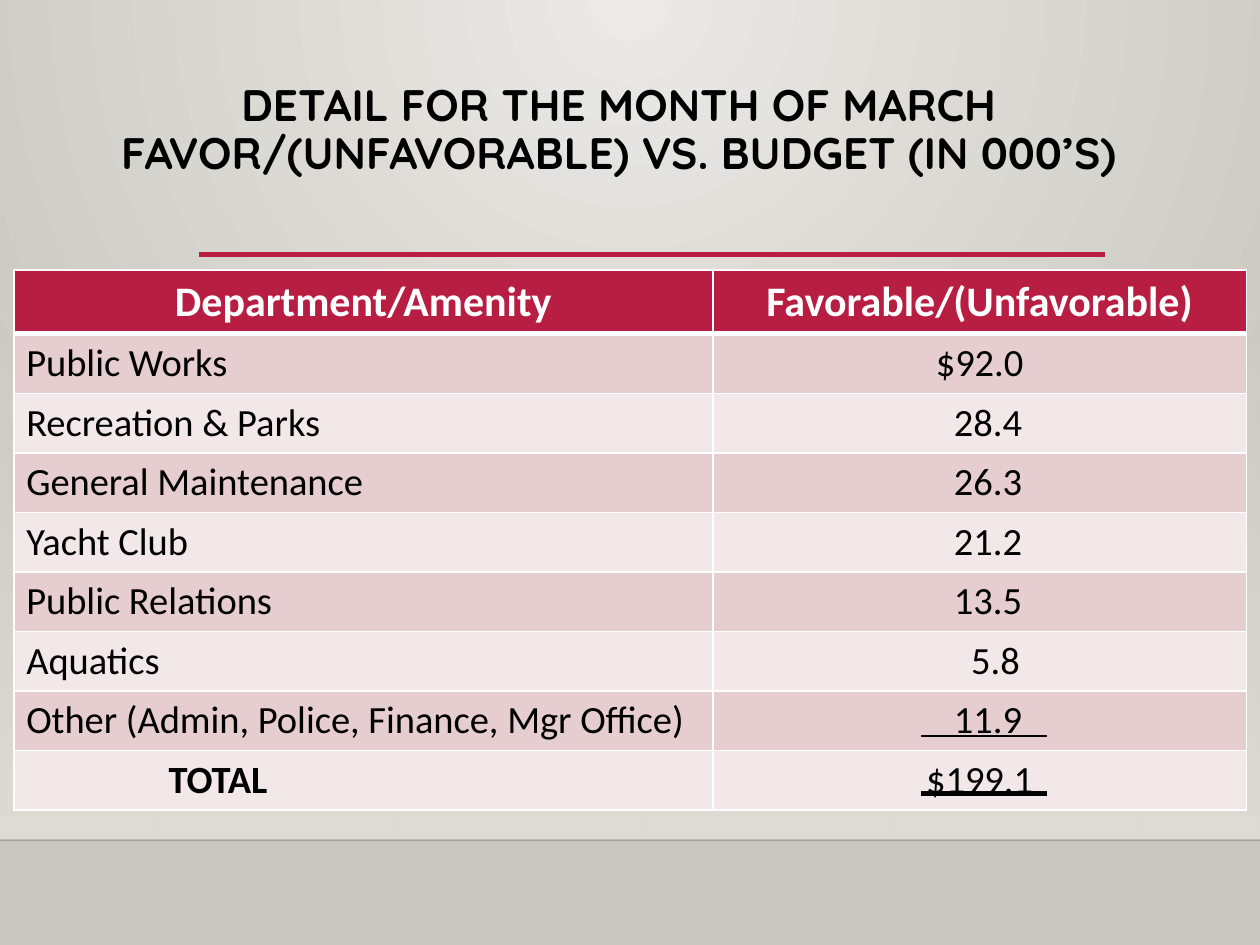
from lxml import etree
from pptx import Presentation
from pptx.dml.color import RGBColor
from pptx.enum.shapes import MSO_CONNECTOR, MSO_SHAPE
from pptx.enum.text import MSO_ANCHOR, MSO_AUTO_SIZE, PP_ALIGN
from pptx.oxml.ns import qn
from pptx.util import Cm, Pt

STRAIGHT = MSO_CONNECTOR.STRAIGHT
RECT = MSO_SHAPE.RECTANGLE
LEFT, CENTER = PP_ALIGN.LEFT, PP_ALIGN.CENTER
BOTTOM = MSO_ANCHOR.BOTTOM
FIXED = MSO_AUTO_SIZE.NONE

HUES = {
    "glow": "ECEAE7", "edge": "CAC7C1", "band": "DFDBD5", "floor": "000001",
    "red": "B71E42", "dark": "E6CDCF", "pale": "F3E8E9",
    "black": "000000", "white": "FFFFFF",
}
INSET = 0.25  # usual side margin of a cell, cm

# Label, value, extra left margin of label and of value in cm
ROWS = [
    ("Public Works", "$92.0", 0, 0),
    ("Recreation & Parks", "28.4", 0, 0.34),
    ("General Maintenance", "26.3", 0, 0.34),
    ("Yacht Club", "21.2", 0, 0.34),
    ("Public Relations", "13.5", 0, 0.34),
    ("Aquatics", "5.8", 0, 0.64),
    ("Other (Admin, Police, Finance, Mgr Office)", "11.9", 0, 0.34),
    ("TOTAL", "$199.1", 2.87, 0),
]


def rgb(hue):
    return RGBColor.from_string(HUES[hue])


def write(frame, text, font="Calibri", size=22, hue="black", bold=False,
          align=LEFT, space=None):
    frame.text = text
    para = frame.paragraphs[0]
    para.alignment = align
    para.line_spacing = space
    for run in para.runs:
        run.font.name = font
        run.font.size = Pt(size)
        run.font.bold = bold
        run.font.color.rgb = rgb(hue)


def fade(node, share):
    """Set the opacity, in percent, of the colour inside a node."""
    color = node.find(".//" + qn("a:srgbClr"))
    etree.SubElement(color, qn("a:alpha")).set("val", str(share * 1000))


def blend(fill, start, end):
    fill.gradient()
    for stop, hue, place in zip(fill.gradient_stops, (start, end), (0, 1)):
        stop.color.rgb = rgb(hue)
        stop.position = place


class Deck:
    def __init__(self):
        self.prs = Presentation()
        self.prs.slide_width, self.prs.slide_height = Cm(25.4), Cm(19.05)
        self.slide = self.prs.slides.add_slide(self.prs.slide_layouts[5])
        self.shapes = self.slide.shapes

    def ground(self):
        blend(self.slide.background.fill, "glow", "edge")
        grad = self.slide.element.find(".//" + qn("a:gradFill"))
        grad.remove(grad.find(qn("a:lin")))
        path = etree.Element(qn("a:path"), path="circle")
        etree.SubElement(path, qn("a:fillToRect"),
                         l="43000", t="0", r="43000", b="100000")
        grad.find(qn("a:gsLst")).addnext(path)

    def band(self, top, high):
        box = self.shapes.add_shape(RECT, 0, Cm(top), self.prs.slide_width,
                                    Cm(high))
        box.shadow.inherit = False
        box.line.fill.background()
        blend(box.fill, "band", "band")
        box.fill.gradient_angle = 270
        fade(box.element.find(".//" + qn("a:gs")), 0)

    def title(self, text, left, top, wide, high):
        box = self.shapes.title
        box.left, box.top, box.width, box.height = map(
            Cm, (left, top, wide, high))
        frame = box.text_frame
        frame.auto_size = FIXED
        frame.word_wrap = True
        frame.vertical_anchor = BOTTOM
        frame.margin_bottom = Cm(0.38)
        write(frame, text, font="Quicksand", size=25.2, bold=True,
              align=CENTER, space=0.9)

    def rule(self, left, right, y, hue, width, share=100):
        line = self.shapes.add_connector(STRAIGHT, Cm(left), Cm(y),
                                         Cm(right), Cm(y))
        line.line.color.rgb = rgb(hue)
        line.line.width = Pt(width)
        props = line.element.spPr
        if share < 100:
            fade(props, share)
        etree.SubElement(props, qn("a:effectLst"))

    def border(self, cell, top, low):
        props = cell._tc.get_or_add_tcPr()
        sides = (("lnL", 1), ("lnR", 1), ("lnT", top), ("lnB", low))
        for spot, (side, width) in enumerate(sides):
            line = etree.Element(qn("a:" + side), w=str(Pt(width)))
            fill = etree.SubElement(line, qn("a:solidFill"))
            etree.SubElement(fill, qn("a:srgbClr"), val=HUES["white"])
            props.insert(spot, line)

    def cell(self, cell, text, fill, top=1, low=1, pad=0, **style):
        cell.fill.solid()
        cell.fill.fore_color.rgb = rgb(fill)
        cell.margin_left = Cm(INSET + pad)
        write(cell.text_frame, text, **style)
        self.border(cell, top, low)

    def table(self, left, top, cols, head, rows, first, high):
        grid = self.shapes.add_table(
            len(rows) + 1, len(cols), Cm(left), Cm(top), Cm(sum(cols)),
            Cm(first + high * len(rows))).table
        for col, wide in zip(grid.columns, cols):
            col.width = Cm(wide)
        for n, row in enumerate(grid.rows):
            row.height = Cm(high if n else first)
        for n, text in enumerate(head):
            self.cell(grid.cell(0, n), text, "red", low=3, size=24,
                      hue="white", bold=True, align=CENTER)
        for n, (label, value, shift, pad) in enumerate(rows, 1):
            fill = "dark" if n % 2 else "pale"
            top = 3 if n == 1 else 1
            self.cell(grid.cell(n, 0), label, fill, top, pad=shift,
                      bold=label == "TOTAL")
            self.cell(grid.cell(n, 1), value, fill, top, pad=pad,
                      align=CENTER)


def main():
    deck = Deck()

    # Backdrop
    deck.ground()
    deck.band(5.6, 11.33)
    deck.rule(0, 25.4, 16.94, "floor", 1, share=20)

    # Heading
    deck.rule(4.01, 22.27, 5.13, "red", 2.5)
    deck.title("DETAIL FOR THE MONTH OF MARCH\v"
               "FAVOR/(UNFAVORABLE) VS. BUDGET (IN 000’S)",
               2.06, 0.58, 20.83, 3.4)

    # Budget table
    deck.table(0.28, 5.44, (14.09, 10.76),
               ("Department/Amenity", "Favorable/(Unfavorable)"),
               ROWS, first=1.28, high=1.2)

    # Sum lines
    deck.rule(18.57, 21.11, 16, "black", 3)
    deck.rule(18.57, 21.11, 14.83, "black", 1.25)

    deck.prs.save("out.pptx")


if __name__ == "__main__":
    main()
